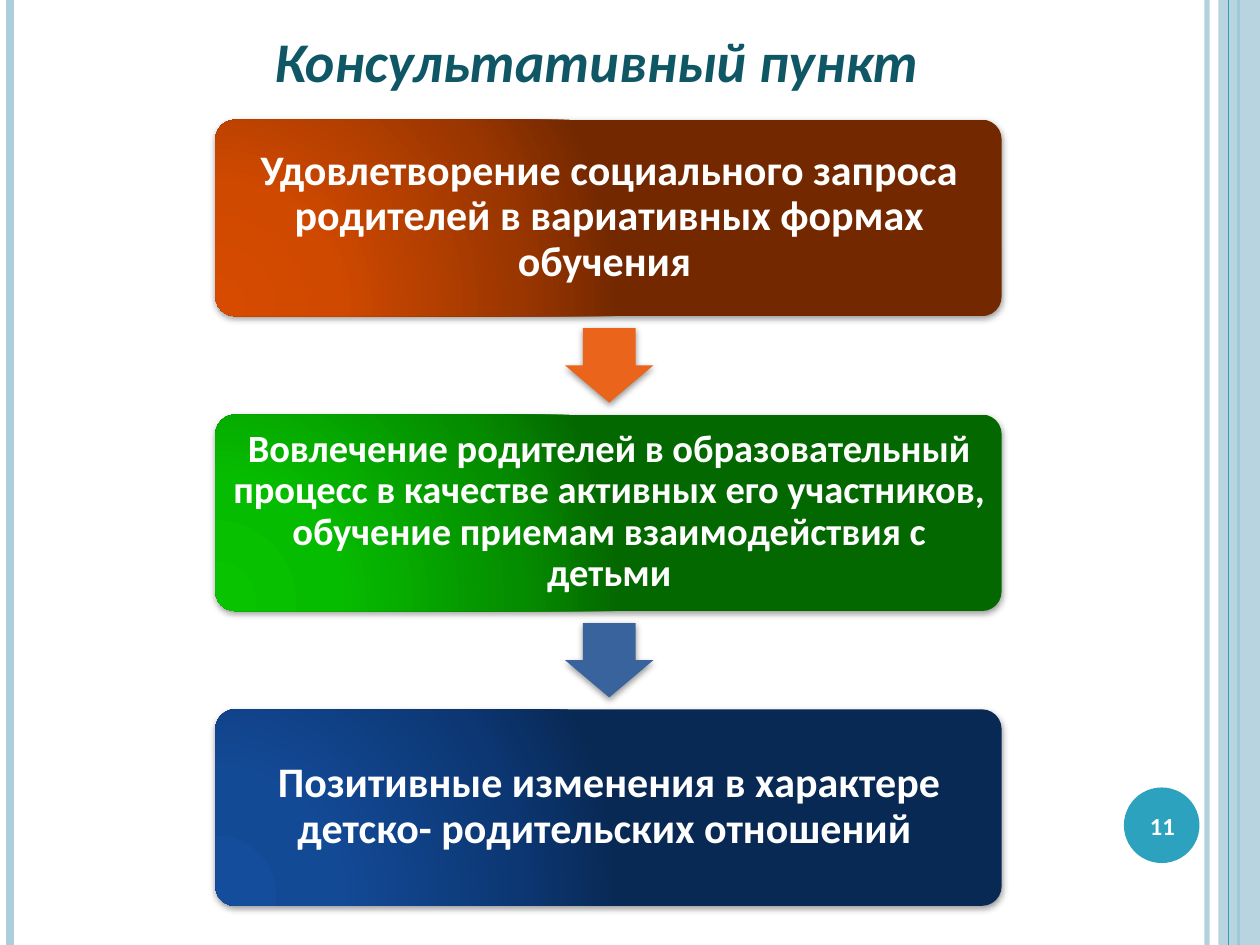
from dataclasses import dataclass

from lxml import etree
from pptx import Presentation
from pptx import util as u
from pptx.dml import color
from pptx.enum import shapes, text
from pptx.oxml import ns


@dataclass(frozen=True)
class Theme:
    font: str = "Calibri"
    white: str = "FFFFFF"
    title: str = "105766"
    accent: str = "2DA2BF"
    pale: str = "ADCEDC"
    shadow: str = "000000"
    orange: tuple = ("D64B00", "CF4900", "9B3600", "732800")
    green: tuple = ("07C300", "06BC00", "058D00", "046800")
    blue: tuple = ("144D9B", "134A96", "0C3773", "092955")
    orange_arrow: str = "EB641B"
    blue_arrow: str = "39639D"
    title_size: int = 32
    large: int = 24
    medium: int = 22
    number_size: int = 14


def rgb(value):
    return color.RGBColor.from_string(value)


def add_child(parent, tag, **attributes):
    values = {name: str(value) for name, value in attributes.items()}
    return etree.SubElement(parent, ns.qn(tag), values)


def set_alpha(properties, percent):
    for node in properties.iter(ns.qn("a:srgbClr")):
        add_child(node, "a:alpha", val=percent * 1000)


class SlideBuilder:
    columns, rows = 100, 75

    def __init__(self, presentation, theme):
        self.theme = theme
        self.column = presentation.slide_width / self.columns
        self.row = presentation.slide_height / self.rows
        self.slide = presentation.slides.add_slide(presentation.slide_layouts[6])

    def place(self, left, top, width, height):
        return (round(left * self.column), round(top * self.row),
                round(width * self.column), round(height * self.row))

    def rule(self, column, tint, weight, alpha=100):
        x = round(column * self.column)
        line = self.slide.shapes.add_connector(
            shapes.MSO_CONNECTOR.STRAIGHT, x, 0, x, round(self.rows * self.row))
        line.line.color.rgb = rgb(tint)
        line.line.width = u.Pt(weight)
        properties = line._element.spPr
        if alpha < 100:
            set_alpha(properties, alpha)
        add_child(properties, "a:effectLst")

    def shape(self, kind, area, fill, adjustments=(), alpha=100, shadow=False):
        shape = self.slide.shapes.add_shape(kind, *self.place(*area))
        shape.shadow.inherit = False
        shape.line.fill.background()
        for index, value in enumerate(adjustments):
            shape.adjustments[index] = value
        if isinstance(fill, tuple):
            self.radial_fill(shape, fill)
        else:
            shape.fill.solid()
            shape.fill.fore_color.rgb = rgb(fill)
        properties = shape._element.spPr
        if alpha < 100:
            set_alpha(properties, alpha)
        if shadow:
            outer = add_child(properties.find(ns.qn("a:effectLst")), "a:outerShdw",
                              blurRad=u.Pt(4), dist=u.Pt(1.6), dir=5400000,
                              algn="ctr", rotWithShape=0)
            add_child(outer, "a:srgbClr", val=self.theme.shadow)
            set_alpha(outer, 42)
        return shape

    def radial_fill(self, shape, tints):
        shape.fill.background()
        properties = shape._element.spPr
        gradient = etree.Element(ns.qn("a:gradFill"), rotWithShape="1")
        stops = add_child(gradient, "a:gsLst")
        for position, tint in zip((0, 30, 75, 100), tints):
            stop = add_child(stops, "a:gs", pos=position * 1000)
            add_child(stop, "a:srgbClr", val=tint)
        circle = add_child(gradient, "a:path", path="circle")
        add_child(circle, "a:fillToRect", l=5000, t=100000, r=120000, b=10000)
        properties.replace(properties.find(ns.qn("a:noFill")), gradient)

    def text(self, area, words, size, tint, italic=False, spacing=1.0, inset=None):
        frame = self.slide.shapes.add_textbox(*self.place(*area)).text_frame
        frame.word_wrap = True
        frame.vertical_anchor = text.MSO_ANCHOR.MIDDLE
        if inset is not None:
            for side in ("left", "top", "right", "bottom"):
                setattr(frame, f"margin_{side}", u.Inches(inset))
        paragraph = frame.paragraphs[0]
        paragraph.alignment = text.PP_ALIGN.CENTER
        paragraph.line_spacing = spacing
        run = paragraph.add_run()
        run.text = words
        formats = {"name": self.theme.font, "size": u.Pt(size),
                   "bold": True, "italic": italic}
        for name, value in formats.items():
            setattr(run.font, name, value)
        run.font.color.rgb = rgb(tint)

    def step(self, top, words, fill, size, inset):
        self.shape(shapes.MSO_SHAPE.ROUNDED_RECTANGLE, (17.1, top, 62.4, 15.6),
                   fill, (0.1,), shadow=True)
        self.text((17.6, top + 0.4, 61.5, 14.7), words, size, self.theme.white,
                  spacing=0.9, inset=inset)

    def down_arrow(self, top, fill):
        arrow = self.shape(shapes.MSO_SHAPE.RIGHT_ARROW, (45.4, top, 5.9, 7),
                           fill, (0.6, 0.5), shadow=True)
        arrow.rotation = 90


def main():
    presentation = Presentation()
    presentation.slide_width, presentation.slide_height = u.Inches(10), u.Inches(7.5)
    theme = Theme()
    builder = SlideBuilder(presentation, theme)

    builder.rule(95.8, theme.pale, 3, alpha=93)
    builder.rule(0.8, theme.pale, 4.5)
    builder.rule(98.3, theme.accent, 1.5)
    builder.shape(shapes.MSO_SHAPE.RECTANGLE, (96.7, 0, 3.3, 75), theme.pale, alpha=87)
    builder.rule(97.5, theme.accent, 0.75)
    builder.shape(shapes.MSO_SHAPE.OVAL, (89.2, 62.5, 6, 6), theme.accent)

    steps = (
        ("Удовлетворение социального запроса родителей в вариативных формах обучения ",
         theme.orange, theme.large, 0.1, theme.orange_arrow),
        ("Вовлечение родителей в образовательный процесс в качестве активных его "
         "участников, обучение приемам взаимодействия с детьми",
         theme.green, theme.medium, 0.09, theme.blue_arrow),
        ("Позитивные изменения в характере детско- родительских отношений ",
         theme.blue, theme.large, 0.1, None),
    )
    for index, (words, fill, size, inset, arrow) in enumerate(steps):
        top = 9.5 + 23.4 * index
        builder.step(top, words, fill, size, inset)
        if arrow:
            builder.down_arrow(top + 16, arrow)

    builder.text((5.9, 0.1, 82.9, 9.4), "Консультативный пункт",
                 theme.title_size, theme.title, italic=True)
    builder.text((88.9, 62.7, 6.7, 5.7), "11", theme.number_size, theme.white)
    presentation.save("out.pptx")


if __name__ == "__main__":
    main()
